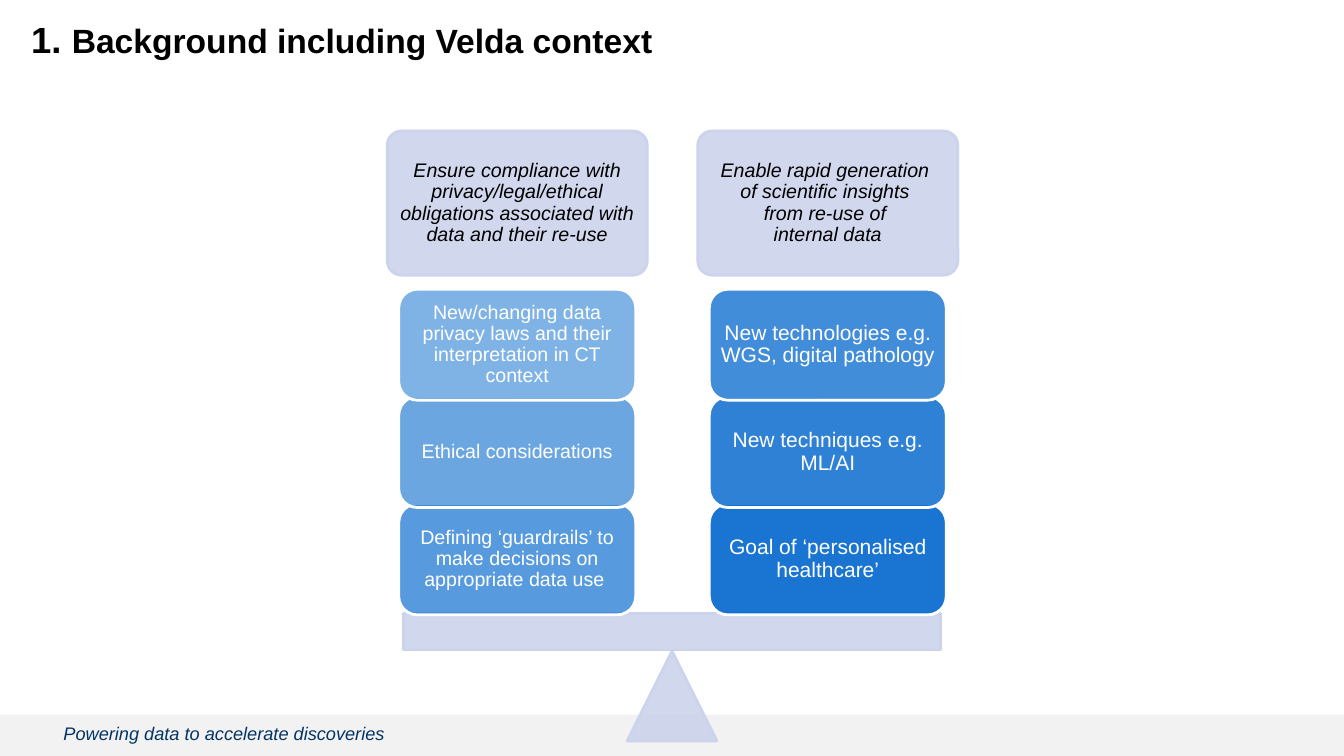
import pptx
import pptx.util
import pptx.dml.color
import pptx.enum.shapes
import pptx.enum.text
import pptx.oxml
import pptx.oxml.ns

Inches = pptx.util.Inches
RGBColor = pptx.dml.color.RGBColor
Shape = pptx.enum.shapes.MSO_SHAPE
Anchor = pptx.enum.text.MSO_ANCHOR
Align = pptx.enum.text.PP_ALIGN

BLACK = RGBColor(0x00, 0x00, 0x00)
WHITE = RGBColor(0xFF, 0xFF, 0xFF)
NAVY = RGBColor(0x04, 0x34, 0x64)
BLUE = RGBColor(0x00, 0x66, 0xCC)
LAVENDER = RGBColor(0xCC, 0xD3, 0xEC)
PALE_GREY = RGBColor(0xF2, 0xF2, 0xF2)

SIDES = [
    ("Ensure compliance with privacy/legal/ethical obligations associated with data and their re-use",
     ["New/changing data privacy laws and their interpretation in CT context",
      "Ethical considerations",
      "Defining ‘guardrails’ to make decisions on appropriate data use "],
     14, 50),
    ("Enable rapid generation \vof scientific insights \vfrom re-use of \vinternal data",
     ["New technologies e.g. WGS, digital pathology",
      "New techniques e.g. ML/AI",
      "Goal of ‘personalised healthcare’"],
     15, 74),
]


def write(frame, text, size, color, bold=False, italic=False, align=Align.LEFT,
          anchor=Anchor.TOP, inset=0, line_spacing=1.0):
    frame.word_wrap = True
    frame.auto_size = pptx.enum.text.MSO_AUTO_SIZE.NONE
    frame.vertical_anchor = anchor
    frame.margin_left = frame.margin_right = Inches(inset)
    frame.margin_top = frame.margin_bottom = Inches(inset)
    paragraph = frame.paragraphs[0]
    paragraph.text = text
    paragraph.alignment = align
    paragraph.line_spacing = line_spacing
    for run in paragraph.runs:
        run.font.name = "Arial"
        run.font.size = pptx.util.Pt(size)
        run.font.bold = bold
        run.font.italic = italic
        run.font.color.rgb = color
    return paragraph


def set_opacity(color_format_owner, percent):
    for color in color_format_owner.iter(pptx.oxml.ns.qn("a:srgbClr")):
        alpha = pptx.oxml.parse_xml(
            f'<a:alpha {pptx.oxml.ns.nsdecls("a")} val="{percent * 1000}"/>')
        color.append(alpha)


def add_piece(slide, kind, left, top, width, height, fill, opacity=100, outline=None):
    piece = slide.shapes.add_shape(
        kind, Inches(left), Inches(top), Inches(width), Inches(height))
    piece.shadow.inherit = False
    piece.fill.solid()
    piece.fill.fore_color.rgb = fill
    if opacity < 100:
        set_opacity(piece.fill._xPr.find(pptx.oxml.ns.qn("a:solidFill")), opacity)
    if outline is None:
        piece.line.fill.background()
    else:
        piece.line.color.rgb = outline
        piece.line.width = pptx.util.Pt(2)
    return piece


def add_footer(slide, left, top, width, height):
    add_piece(slide, Shape.RECTANGLE, left, top, width, height, PALE_GREY)
    tagline = slide.shapes.add_textbox(
        Inches(left + 0.63), Inches(top + 0.08), Inches(11.93), Inches(0.23))
    write(tagline.text_frame, "Powering data to accelerate discoveries", 13, NAVY, italic=True)


def add_title(slide, left, top, width, height):
    title = slide.shapes.title
    title.left, title.top = Inches(left), Inches(top)
    title.width, title.height = Inches(width), Inches(height)
    heading = write(title.text_frame, "1. ", 26, BLACK, bold=True)
    topic = heading.add_run()
    topic.text = "Background including Velda context"
    topic.font.name = "Arial"
    topic.font.size = pptx.util.Pt(24)
    topic.font.bold = True
    topic.font.color.rgb = BLACK


def add_support(slide, left, top, width):
    beam_height, pivot_size = 0.36, 0.89
    add_piece(slide, Shape.ISOSCELES_TRIANGLE, left + (width - pivot_size) / 2,
              top + beam_height + 0.01, pivot_size, pivot_size, LAVENDER, 90, LAVENDER)
    add_piece(slide, Shape.RECTANGLE, left, top, width, beam_height, LAVENDER, 90, LAVENDER)


def add_side(slide, left, top, width, goal, weights, size, opacity):
    layout = dict(align=Align.CENTER, anchor=Anchor.MIDDLE, inset=0.06, line_spacing=0.9)
    goal_box = add_piece(slide, Shape.ROUNDED_RECTANGLE, left, top, width, 1.43,
                         LAVENDER, 90, LAVENDER)
    goal_box.adjustments[0] = 0.1
    write(goal_box.text_frame, goal, 14, BLACK, italic=True, **layout)
    for row, weight in reversed(list(enumerate(weights))):
        block = add_piece(slide, Shape.ROUNDED_RECTANGLE, left + 0.115,
                          top + 1.57 + row * 1.065, width - 0.23, 1.1,
                          BLUE, opacity + row * 8, WHITE)
        write(block.text_frame, weight, size, WHITE, **layout)


def add_balance(slide, left, top):
    add_support(slide, left + 0.16, top + 4.79, 5.33)
    for column, side in enumerate(SIDES):
        add_side(slide, left + column * 3.08, top, 2.58, *side)


def main():
    deck = pptx.Presentation()
    deck.slide_width, deck.slide_height = Inches(13.33), Inches(7.5)
    slide = deck.slides.add_slide(deck.slide_layouts[5])
    add_footer(slide, 0, 7.09, 13.33, 0.41)
    add_title(slide, 0.31, 0.17, 12.19, 0.96)
    add_balance(slide, 3.84, 1.3)
    deck.save("out.pptx")


if __name__ == "__main__":
    main()
